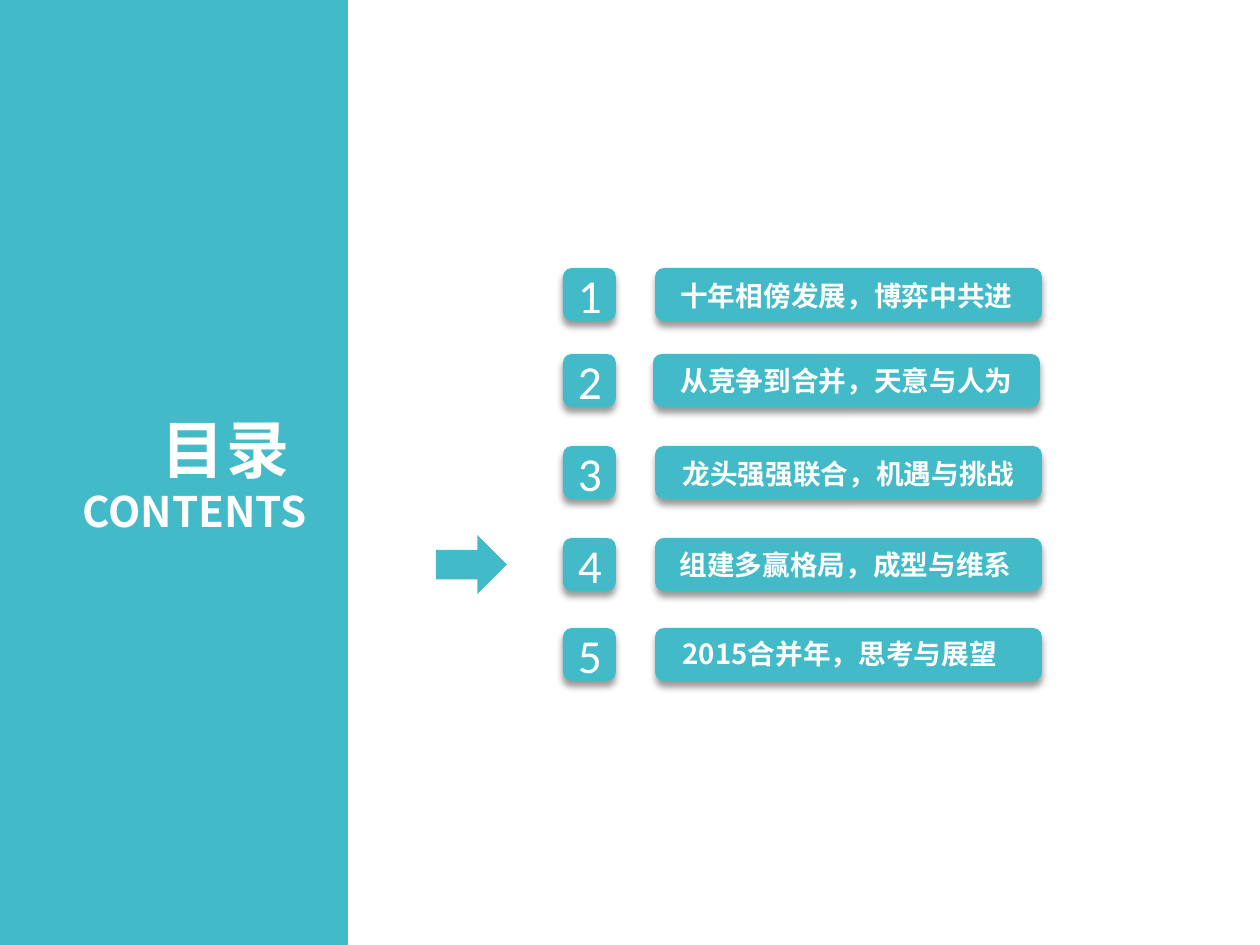
import pptx
import pptx.util
import pptx.dml.color
import pptx.enum.shapes
import pptx.enum.text
import pptx.oxml
import pptx.oxml.ns

# Content: number top, bar left, label left, label top, label width, label
ENTRIES = [
    (268, 655, 668, 273, 367, "十年相傍发展，博弈中共进"),
    (354, 653, 668, 358, 359, "从竞争到合并，天意与人为"),
    (446, 655, 670, 451, 384, "龙头强强联合，机遇与挑战"),
    (538, 655, 667, 542, 360, "组建多赢格局，成型与维系"),
    (628, 655, 670, 631, 360, "2015合并年，思考与展望"),
]
TITLE_LINES = [("目录 ", 36, 150), ("CONTENTS", 24, 0)]

TEAL, WHITE = "42BAC8", "FFFFFF"
CJK_FONT, NUMBER_FONT = "Noto Sans CJK SC", "Calibri"
NUMBER_LEFT, TILE, BAR_WIDTH, LABEL_HEIGHT = 563, 53, 387, 47
SCALE = 914400 / 126
SHAPES = pptx.enum.shapes.MSO_SHAPE
ALIGN = pptx.enum.text.PP_ALIGN
SHADOW = (
    '<a:effectLst %s><a:outerShdw blurRad="50800" dist="38100" dir="5400000" '
    'algn="t" rotWithShape="0"><a:srgbClr val="000000"><a:alpha val="40000"/>'
    '</a:srgbClr></a:outerShdw></a:effectLst>' % pptx.oxml.ns.nsdecls("a")
)


def px(*lengths):
    return [pptx.util.Emu(round(length * SCALE)) for length in lengths]


def color(value):
    return pptx.dml.color.RGBColor.from_string(value)


def add_block(parent, kind, box, shadow=False):
    shape = parent.add_shape(kind, *px(*box))
    shape.fill.solid()
    shape.fill.fore_color.rgb = color(TEAL)
    shape.line.fill.background()
    shape.shadow.inherit = False
    if shadow:
        properties = shape.element.spPr
        properties.remove(properties.find(pptx.oxml.ns.qn("a:effectLst")))
        properties.append(pptx.oxml.parse_xml(SHADOW))
    return shape


def add_span(para, text, size, font, bold=False, spacing=0):
    span = para.add_run()
    span.text = text
    span.font.size = pptx.util.Pt(size)
    span.font.bold = bold
    span.font.color.rgb = color(WHITE)
    span.font.name = font
    properties = span.font._element
    east_asian = pptx.oxml.parse_xml("<a:ea %s/>" % pptx.oxml.ns.nsdecls("a"))
    east_asian.set("typeface", font)
    properties.append(east_asian)
    if spacing:
        properties.set("spc", str(spacing))


def add_text_frame(parent, box):
    frame = parent.add_textbox(*px(*box)).text_frame
    frame.word_wrap = True
    frame.auto_size = pptx.enum.text.MSO_AUTO_SIZE.SHAPE_TO_FIT_TEXT
    return frame


deck = pptx.Presentation()
deck.slide_width, deck.slide_height = px(1260, 945)
shapes = deck.slides.add_slide(deck.slide_layouts[6]).shapes

# Side panel with title
add_block(shapes, SHAPES.RECTANGLE, (0, 0, 348, 945))
title = add_text_frame(shapes, (29, 404, 290, 140))
for index, (text, size, spacing) in enumerate(TITLE_LINES):
    para = title.add_paragraph() if index else title.paragraphs[0]
    para.alignment = ALIGN.RIGHT
    add_span(para, text, size, CJK_FONT, True, spacing)

# Numbered contents entries
for number, (top, bar_left, left, label_top, width, text) in enumerate(ENTRIES, 1):
    tile = add_block(shapes, SHAPES.ROUNDED_RECTANGLE,
                     (NUMBER_LEFT, top, TILE, TILE), shadow=True)
    tile.text_frame.vertical_anchor = pptx.enum.text.MSO_ANCHOR.MIDDLE
    para = tile.text_frame.paragraphs[0]
    para.alignment = ALIGN.CENTER
    add_span(para, str(number), 27, NUMBER_FONT)

    entry = shapes.add_group_shape().shapes
    add_block(entry, SHAPES.ROUNDED_RECTANGLE,
              (bar_left, top, BAR_WIDTH, TILE), shadow=True)
    label = add_text_frame(entry, (left, label_top, width, LABEL_HEIGHT))
    add_span(label.paragraphs[0], text, 15.8, CJK_FONT, True)

# Arrow marking the current entry
arrow = add_block(shapes, SHAPES.DOWN_ARROW, (442, 529, 59, 71))
arrow.rotation = 270

deck.save("out.pptx")
